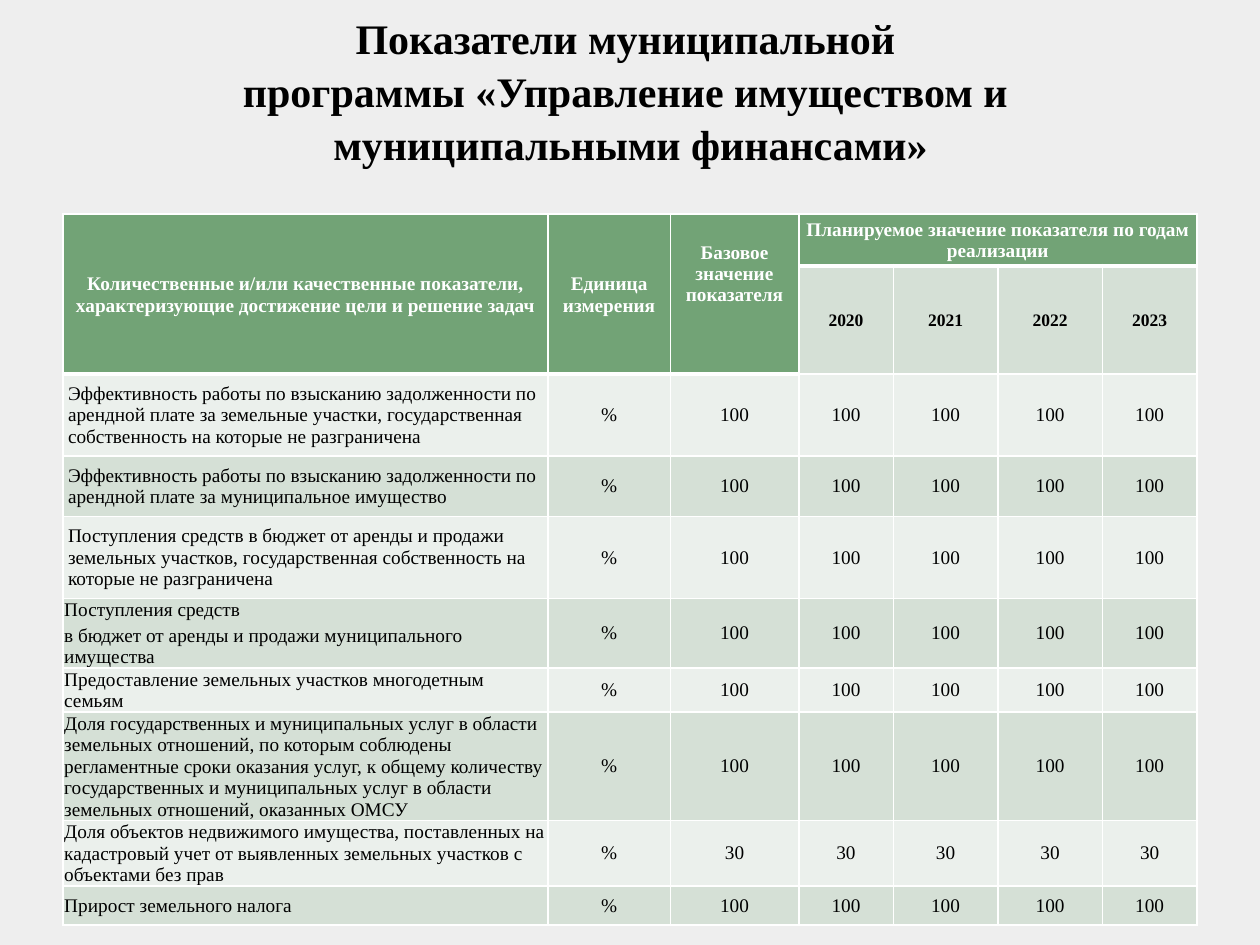
import dataclasses

import lxml.etree
import pptx
import pptx.dml.color
import pptx.enum.text
import pptx.oxml.ns
import pptx.util

Inches = pptx.util.Inches
Pt = pptx.util.Pt
ALIGN = pptx.enum.text.PP_ALIGN
ANCHOR = pptx.enum.text.MSO_ANCHOR


@dataclasses.dataclass(frozen=True)
class Theme:
    font: str = "Times New Roman"
    background: str = "EEEEEE"
    header: str = "72A376"
    band_dark: str = "D5E0D6"
    band_light: str = "EBF0EC"
    white: str = "FFFFFF"
    black: str = "000000"
    title_size: int = 24
    body_size: int = 11
    year_size: int = 10


TIGHT = (0.01, 0.01, 0.01, 0)
ROOMY = (0.04, 0.07, 0.04, 0.07)
RAISED = (0.01, 0.01, 0.01, 0.33)

TITLE = "Показатели муниципальной \vпрограммы «Управление имуществом и \vмуниципальными финансами»"
COLUMN_WIDTHS = [3.85, 0.97, 1.02, 0.75, 0.83, 0.83, 0.75]
ROW_HEIGHTS = [0.41, 0.86, 0.65, 0.48, 0.65, 0.55, 0.35, 0.86, 0.52, 0.31]
HEADERS = [
    ("Количественные и/или качественные показатели, характеризующие достижение цели и решение задач", TIGHT),
    ("Единица измерения", TIGHT),
    ("Базовое значение показателя", RAISED),
]
PLAN_HEADER = "Планируемое значение показателя по годам реализации"
YEARS = ["2020", "2021", "2022", "2023"]
INDICATORS = [
    ("Эффективность работы по взысканию задолженности по арендной плате за земельные участки, "
     "государственная собственность на которые не разграничена", "100", ROOMY),
    ("Эффективность работы по взысканию задолженности по арендной плате за муниципальное имущество",
     "100", ROOMY),
    ("Поступления средств в бюджет от аренды и продажи земельных участков, "
     "государственная собственность на которые не разграничена", "100", ROOMY),
    ("Поступления средств\nв бюджет от аренды и продажи муниципального имущества", "100", TIGHT),
    ("Предоставление земельных участков многодетным семьям", "100", TIGHT),
    ("Доля государственных и муниципальных услуг в области земельных отношений, по которым "
     "соблюдены регламентные сроки оказания услуг, к общему количеству государственных и "
     "муниципальных услуг в области земельных отношений, оказанных ОМСУ", "100", TIGHT),
    ("Доля объектов недвижимого имущества, поставленных на кадастровый учет от выявленных "
     "земельных участков с объектами без прав", "30", TIGHT),
    ("Прирост земельного налога", "100", TIGHT),
]


class SlideBuilder:
    def __init__(self, presentation, theme):
        self.theme = theme
        self.slide = presentation.slides.add_slide(presentation.slide_layouts[5])
        fill = self.slide.background.fill
        fill.solid()
        fill.fore_color.rgb = self.color(theme.background)

    def color(self, value):
        return pptx.dml.color.RGBColor.from_string(value)

    def format_text(self, text_frame, size, color, bold, align):
        for index, paragraph in enumerate(text_frame.paragraphs):
            paragraph.alignment = align
            if index:
                paragraph.space_before = Pt(size * 0.2)
            for run in paragraph.runs:
                run.font.name = self.theme.font
                run.font.size = Pt(size)
                run.font.bold = bold
                run.font.color.rgb = self.color(color)

    def title(self, text, left, top, width, height):
        shape = self.slide.shapes.title
        shape.left, shape.top, shape.width, shape.height = map(Inches, (left, top, width, height))
        text_frame = shape.text_frame
        text_frame.text = text
        text_frame.word_wrap = True
        text_frame.auto_size = pptx.enum.text.MSO_AUTO_SIZE.NONE
        text_frame.vertical_anchor = ANCHOR.BOTTOM
        text_frame.paragraphs[0].line_spacing = 1.05
        self.format_text(text_frame, self.theme.title_size, self.theme.black, True, ALIGN.CENTER)

    def table(self, left, top, widths, heights):
        frame = self.slide.shapes.add_table(
            len(heights), len(widths), Inches(left), Inches(top), Inches(sum(widths)), Inches(sum(heights)))
        table = frame.table
        table.first_row = False
        table.horz_banding = False
        for column, width in zip(table.columns, widths):
            column.width = Inches(width)
        for row, height in zip(table.rows, heights):
            row.height = Inches(height)
        return table

    def borders(self, cell, bottom):
        properties = cell._tc.get_or_add_tcPr()
        qualify = pptx.oxml.ns.qn
        for index, (side, points) in enumerate([("L", 1), ("R", 1), ("T", 1), ("B", bottom)]):
            line = lxml.etree.Element(qualify(f"a:ln{side}"), w=str(Pt(points)))
            solid = lxml.etree.SubElement(line, qualify("a:solidFill"))
            lxml.etree.SubElement(solid, qualify("a:srgbClr"), val=self.theme.white)
            properties.insert(index, line)

    def cell(self, cell, text, fill, insets, size, color, bold=False, align=ALIGN.CENTER, bottom=1):
        cell.text_frame.text = text
        cell.vertical_anchor = ANCHOR.MIDDLE
        cell.margin_left, cell.margin_top, cell.margin_right, cell.margin_bottom = map(Inches, insets)
        cell.fill.solid()
        cell.fill.fore_color.rgb = self.color(fill)
        self.borders(cell, bottom)
        self.format_text(cell.text_frame, size, color, bold, align)

    def header_cell(self, table, column, text, insets, last_row, last_column):
        for row_index in range(last_row + 1):
            for column_index in range(column, last_column + 1):
                origin = (row_index, column_index) == (0, column)
                self.cell(table.cell(row_index, column_index), text if origin else "", self.theme.header,
                          insets, self.theme.body_size, self.theme.white, bold=True, bottom=3)
        table.cell(0, column).merge(table.cell(last_row, last_column))

    def indicator_table(self, left, top):
        theme = self.theme
        table = self.table(left, top, COLUMN_WIDTHS, ROW_HEIGHTS)
        for column, (text, insets) in enumerate(HEADERS):
            self.header_cell(table, column, text, insets, 1, column)
        first_year = len(HEADERS)
        self.header_cell(table, first_year, PLAN_HEADER, TIGHT, 0, len(COLUMN_WIDTHS) - 1)
        for column, year in enumerate(YEARS, first_year):
            self.cell(table.cell(1, column), year, theme.band_dark, TIGHT, theme.year_size,
                      theme.black, bold=True)
        for row, (name, value, insets) in enumerate(INDICATORS, 2):
            fill = theme.band_dark if row % 2 else theme.band_light
            self.cell(table.cell(row, 0), name, fill, insets, theme.body_size, theme.black, align=ALIGN.LEFT)
            for column, text in enumerate(["%"] + [value] * (1 + len(YEARS)), 1):
                self.cell(table.cell(row, column), text, fill, ROOMY, theme.body_size, theme.black)


def main():
    presentation = pptx.Presentation()
    presentation.slide_width = Inches(10)
    presentation.slide_height = Inches(7.5)
    builder = SlideBuilder(presentation, Theme())
    builder.indicator_table(0.5, 1.7)
    builder.title(TITLE, 0.51, 0.13, 8.99, 1.26)
    presentation.save("out.pptx")


if __name__ == "__main__":
    main()
